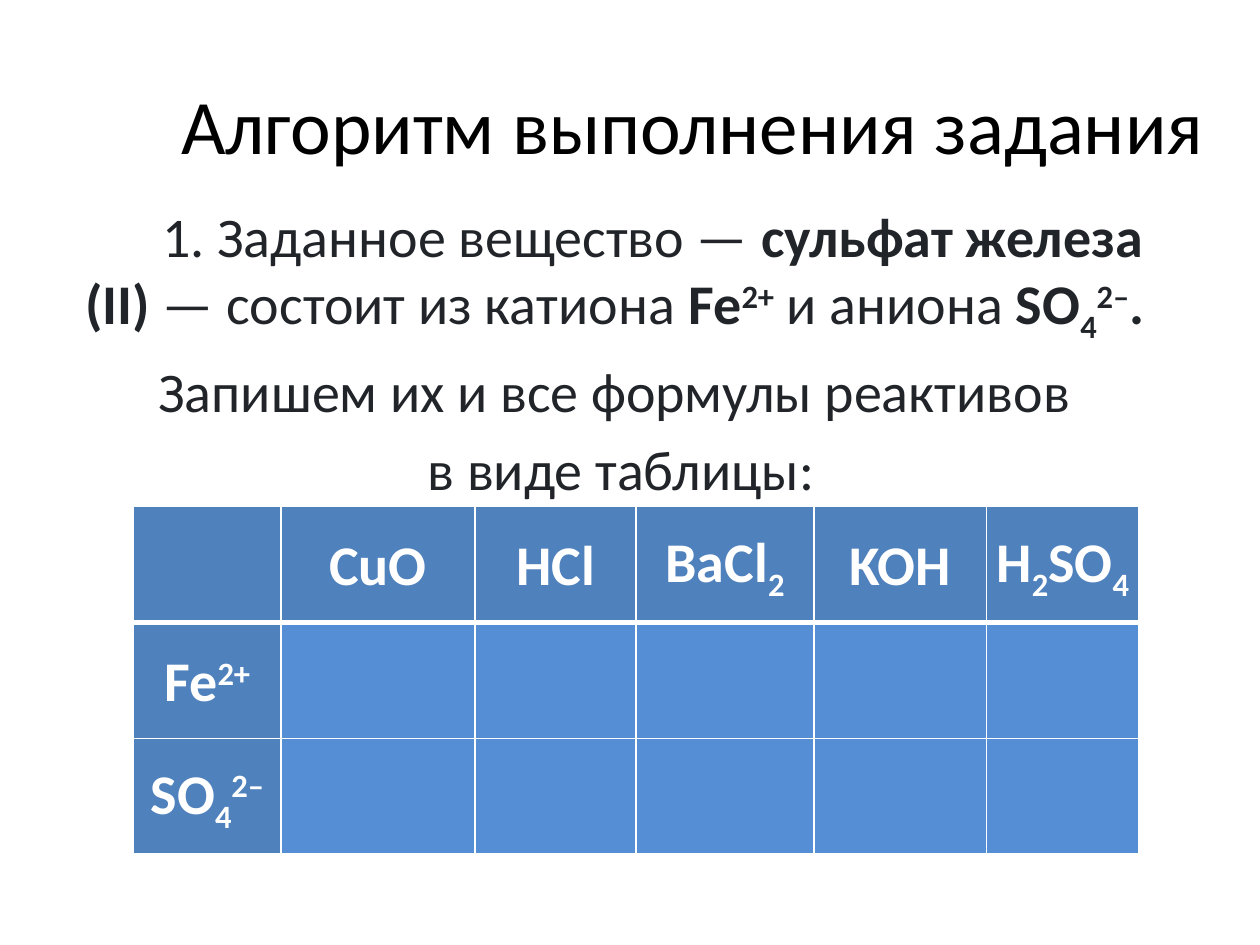
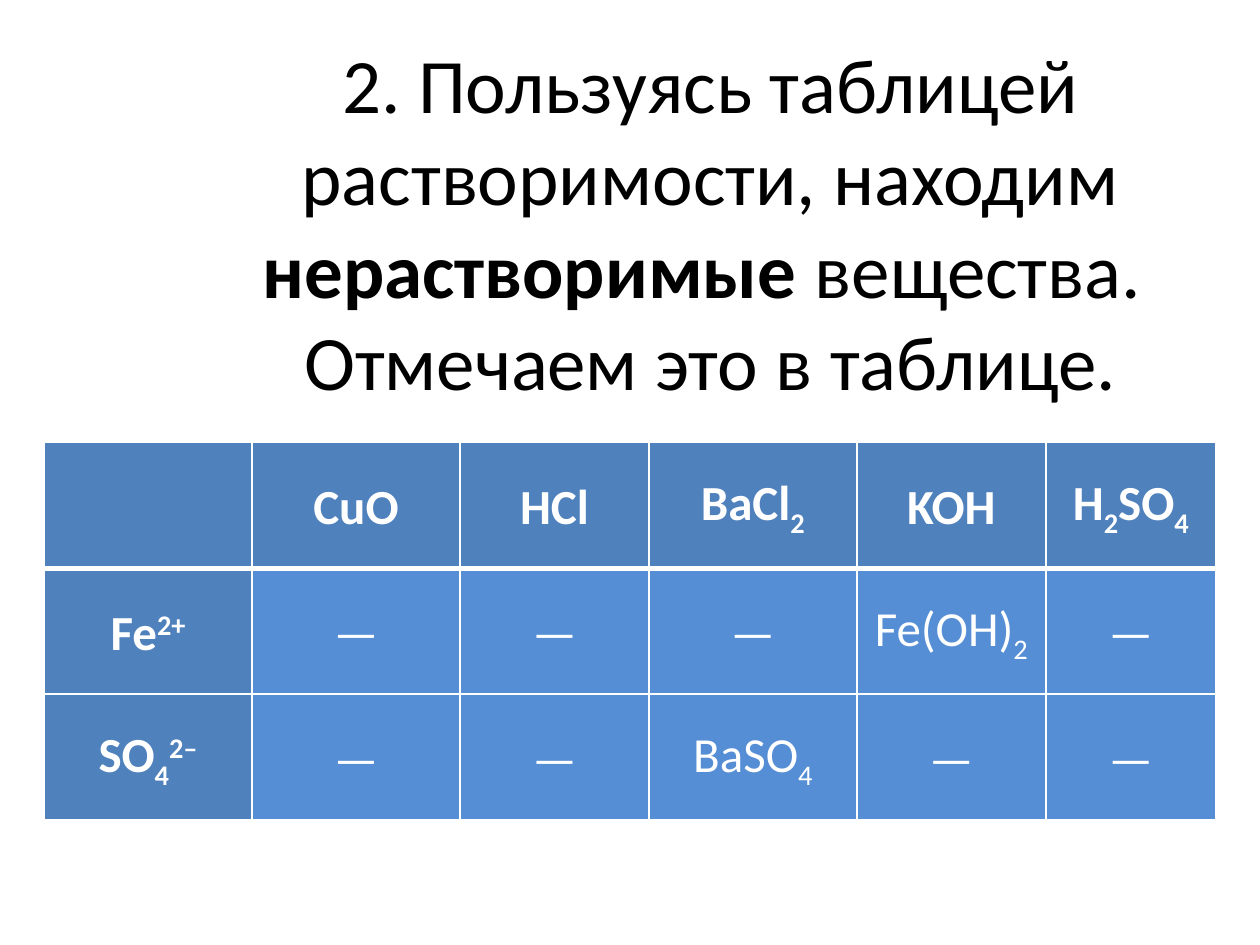
from lxml.etree import SubElement
from pptx import Presentation
from pptx.dml.color import RGBColor
from pptx.enum.text import MSO_ANCHOR as Anchor, MSO_AUTO_SIZE as AutoSize, PP_ALIGN as Align
from pptx.oxml.ns import qn
from pptx.util import Inches, Pt

BLACK = RGBColor(0x00, 0x00, 0x00)
INK = RGBColor(0x21, 0x25, 0x29)
WHITE = RGBColor(0xFF, 0xFF, 0xFF)
HEADER_BLUE = RGBColor(0x4F, 0x81, 0xBD)
CELL_BLUE = RGBColor(0x55, 0x8E, 0xD5)
FONT = "Calibri"
TITLE_LAYOUT, LIST_LAYOUT = 5, 1
BASELINES = {"_": -25000, "^": 30000}

REAGENTS = ["", "CuO", "HCl", "BaCl_2_", "KOH", "H_2_SO_4_"]
IRON, SULFATE = "Fe^2+^", "SO_4_^2–^"

PAGES = [
    {
        "title": "Алгоритм выполнения задания",
        "title_at": (1, 0.36, 9, 1.25),
        "body": [
            "1. Заданное вещество — *сульфат железа (II) *— состоит из катиона "
            "*Fe^2+^*\u00a0и аниона *SO_4_^2–^. *",
            "Запишем их и все формулы реактивов ",
            "в виде таблицы:",
        ],
        "body_at": (0.43, 1.55, 9, 4.95),
        "rows": [REAGENTS, [IRON] + [""] * 5, [SULFATE] + [""] * 5],
        "table_at": (1.06, 4.02),
        "widths": [1.17, 1.54, 1.28, 1.41, 1.37, 1.21],
        "row_height": 0.92,
        "size": 32,
    },
    {
        "title": "2. Пользуясь таблицей растворимости, находим *нерастворимые* вещества. \n"
                 "Отмечаем это в таблице.",
        "title_at": (1.14, 0.28, 9, 2.95),
        "rows": [
            REAGENTS,
            [IRON, "—", "—", "—", "Fe(OH)_2_", "—"],
            [SULFATE, "—", "—", "BaSO_4_", "—", "—"],
        ],
        "table_at": (0.35, 3.51),
        "widths": [1.65, 1.65, 1.5, 1.65, 1.5, 1.35],
        "row_height": 1,
        "size": 28,
    },
]


def write(para, text, size, color, bold=False):
    """Write centred text where * toggles bold, _ subscript and ^ superscript."""
    para.alignment = Align.CENTER
    active, piece = set(), ""

    def flush():
        if not piece:
            return
        span = para.add_run()
        span.text = piece
        font = span.font
        font.name, font.size, font.bold = FONT, Pt(size), bold or "*" in active
        font.color.rgb = color
        for mark in active & set(BASELINES):
            span._r.get_or_add_rPr().set("baseline", str(BASELINES[mark]))

    for char in text + "*":
        if char in "*_^\n":
            flush()
            piece = ""
            if char == "\n":
                para.add_line_break()
            else:
                active ^= {char}
        else:
            piece += char


def place(box, at):
    """Move a placeholder and fix its text size."""
    box.left, box.top, box.width, box.height = map(Inches, at)
    box.text_frame.word_wrap = True
    box.text_frame.auto_size = AutoSize.NONE
    return box.text_frame


def add_body(box, lines, at):
    """Fill the body placeholder with centred lines without bullets."""
    frame = place(box, at)
    for index, line in enumerate(lines):
        para = frame.paragraphs[0] if index == 0 else frame.add_paragraph()
        props = para._p.get_or_add_pPr()
        props.set("marL", "0")
        props.set("indent", str(Inches(0 if index else 0.5)))
        SubElement(props, qn("a:buNone"))
        if index == 0:
            para.space_before = Pt(0)
        write(para, line, 32, INK)


def set_borders(cell, bottom, top):
    """Draw white cell borders below the fill settings."""
    props = cell._tc.get_or_add_tcPr()
    widths = {"lnL": 1, "lnR": 1, "lnT": top, "lnB": bottom}
    for name, width in widths.items():
        line = SubElement(props, qn(f"a:{name}"), w=str(Pt(width)))
        fill = SubElement(line, qn("a:solidFill"))
        SubElement(fill, qn("a:srgbClr"), val=str(WHITE))


def add_reagent_table(page, rows, at, widths, row_height, size):
    """Add the table of ions against reagents."""
    frame = page.shapes.add_table(len(rows), len(widths), *map(Inches, at),
                                  Inches(sum(widths)), Inches(row_height * len(rows)))
    table = frame.table
    table.first_col, table.horz_banding = True, False
    for column, width in zip(table.columns, widths):
        column.width = Inches(width)
    for r, row in enumerate(rows):
        table.rows[r].height = Inches(row_height)
        for c, text in enumerate(row):
            cell = table.cell(r, c)
            heading = r == 0 or c == 0
            set_borders(cell, bottom=3 if r == 0 else 1, top=3 if r == 1 else 1)
            cell.fill.solid()
            cell.fill.fore_color.rgb = HEADER_BLUE if heading else CELL_BLUE
            cell.vertical_anchor = Anchor.MIDDLE
            cell.margin_left = cell.margin_right = Inches(0.01)
            cell.margin_top = cell.margin_bottom = Inches(0.01)
            para = cell.text_frame.paragraphs[0]
            para.line_spacing = 1.07
            write(para, text, size, WHITE, bold=heading)


def main():
    """Build the deck."""
    deck = Presentation()
    deck.slide_width, deck.slide_height = Inches(10), Inches(7.5)
    for content in PAGES:
        layout = LIST_LAYOUT if "body" in content else TITLE_LAYOUT
        page = deck.slides.add_slide(deck.slide_layouts[layout])
        frame = place(page.shapes.title, content["title_at"])
        frame.vertical_anchor = Anchor.MIDDLE
        write(frame.paragraphs[0], content["title"], 44, BLACK)
        if "body" in content:
            add_body(page.placeholders[1], content["body"], content["body_at"])
        add_reagent_table(page, content["rows"], content["table_at"], content["widths"],
                          content["row_height"], content["size"])
    deck.save("out.pptx")


if __name__ == "__main__":
    main()
